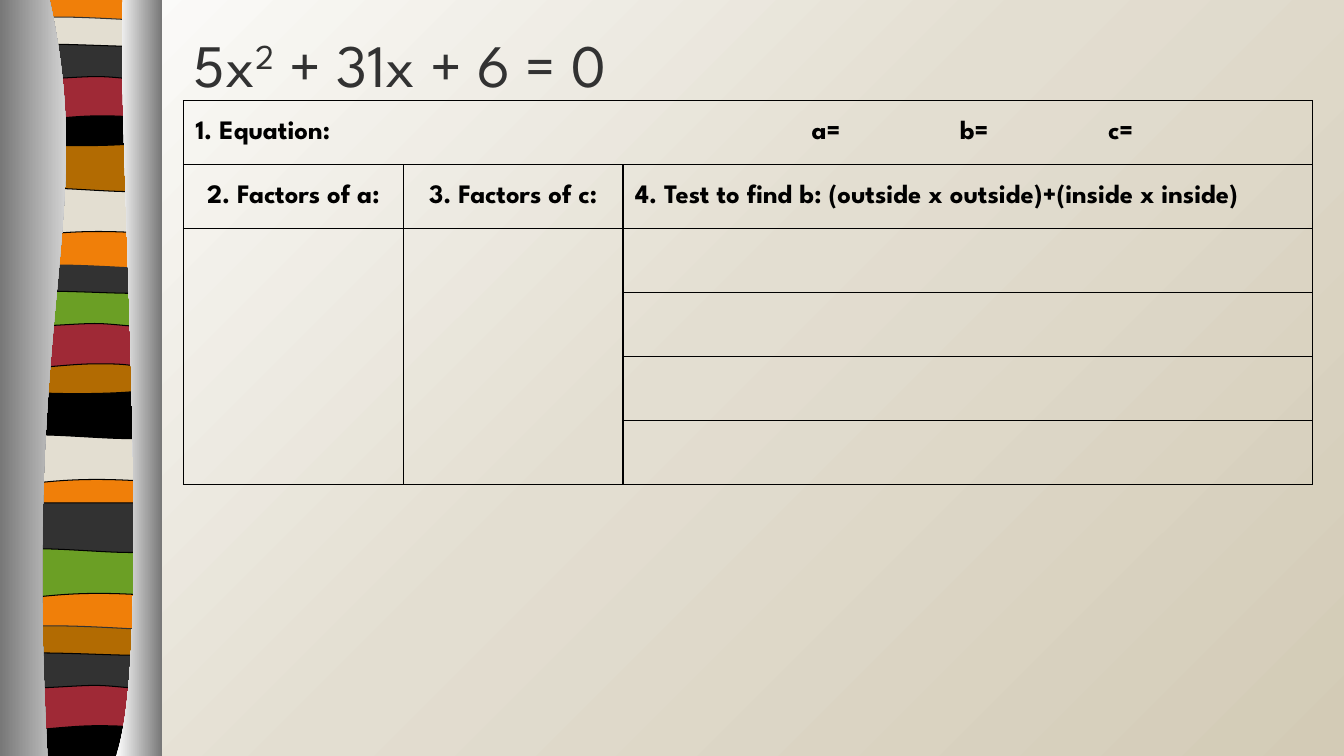
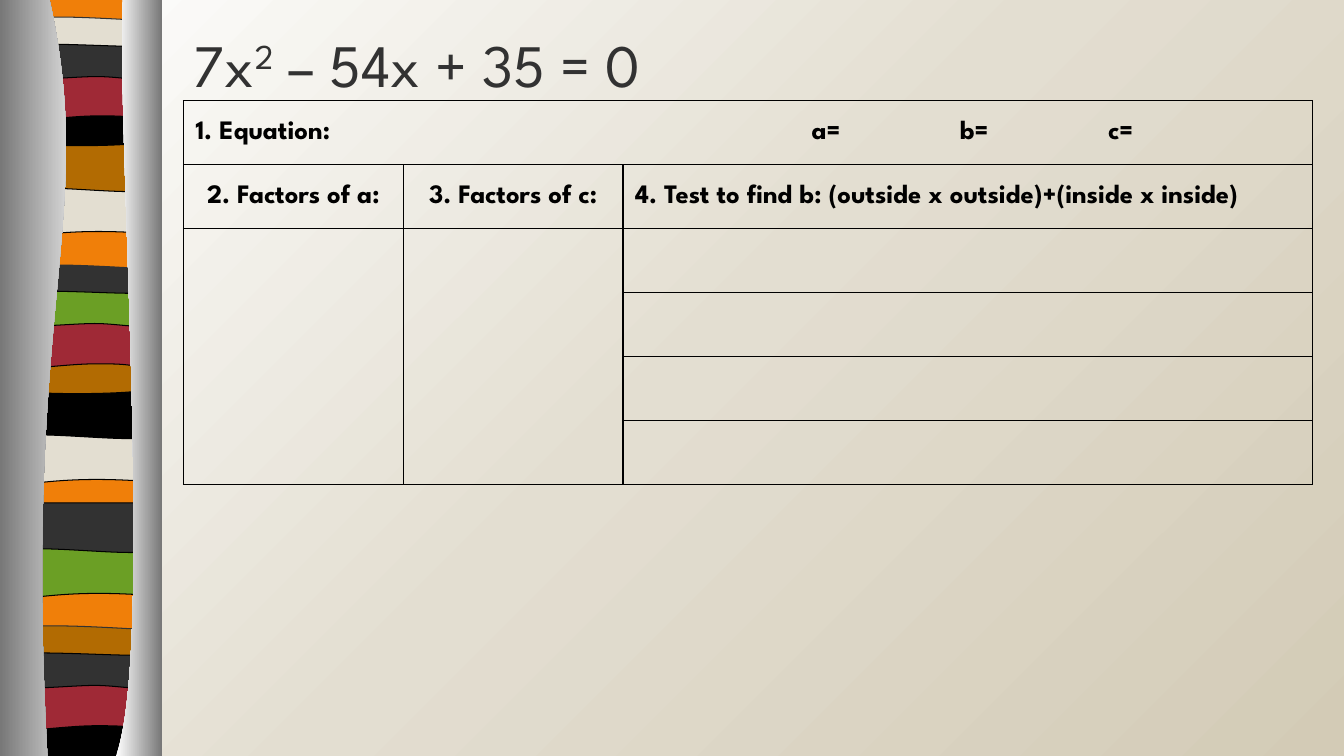
from copy import deepcopy

from lxml import etree
from pptx import Presentation
from pptx.dml.color import RGBColor
from pptx.enum.shapes import MSO_SHAPE
from pptx.enum.text import MSO_ANCHOR, PP_ALIGN
from pptx.oxml.ns import qn
from pptx.util import Inches, Pt

RECTANGLE = MSO_SHAPE.RECTANGLE
MIDDLE = MSO_ANCHOR.MIDDLE
LEFT, CENTER = PP_ALIGN.LEFT, PP_ALIGN.CENTER

BLACK = RGBColor(0x00, 0x00, 0x00)
WHITE = RGBColor(0xFF, 0xFF, 0xFF)
CHARCOAL = RGBColor(0x32, 0x32, 0x32)
ORANGE = RGBColor(0xF0, 0x7F, 0x09)
CREAM = RGBColor(0xE3, 0xDE, 0xD1)
SAND = RGBColor(0xD3, 0xCB, 0xB6)
BROWN = RGBColor(0xB2, 0x6B, 0x02)
RED = RGBColor(0x9F, 0x29, 0x36)
GREEN = RGBColor(0x6B, 0x9F, 0x25)
GRAY = RGBColor(0x76, 0x76, 0x76)

FONT = "League Spartan"
WIDTH, HEIGHT = 13.33, 7.5
LEFT_EDGE = 1.82

RIBBON = [(1.49, 0), (1.49, 7.48), (0, 7.48), (0, 0)]
WAVE = [(1.49, 0), (1.49, 0.47), (0.46, 0.39, 0.24, 0.55, 0, 0.47), (0, 0)]
SWELL = [(1.49, 0), (1.49, 0.47), (1.24, 0.54, 0.46, 0.41, 0, 0.47), (0, 0)]
LENS = [(1.49, 0.05), (1.49, 0.29), (1.24, 0.33, 0.24, 0.33, 0, 0.29), (0, 0.05),
        (0.1, 0, 0.33, 0.01, 0.57, 0.01), (0.82, 0.01, 1.3, 0.04, 1.49, 0.05)]
BOWL = [(1.49, 0), (1.49, 0.33), (1.24, 0.39, 0.25, 0.39, 0, 0.33), (0, 0),
        (0.92, 0.06, 1.18, 0, 1.49, 0)]
FOOT = [(1.49, 0), (1.49, 0.38), (0.01, 0.38), (0, 0), (0.92, 0.06, 1.18, 0, 1.49, 0)]
ARCH = [(1.49, 0), (1.49, 0.47), (1.26, 0.41, 1.17, 0.41, 0.92, 0.41),
        (0.67, 0.41, 0.23, 0.47, 0, 0.47), (0, 0)]
RIPPLE = [(1.49, 0.05), (1.49, 0.35), (1.39, 0.41, 1.16, 0.35, 0.92, 0.35),
          (0.67, 0.35, 0.15, 0.41, 0, 0.35), (0, 0.05),
          (0.21, 0, 1.01, 0.05, 1.26, 0.05), (1.51, 0.05, 1.44, 0.05, 1.49, 0.05)]
STRIPES = [
    (RIBBON, 0.04, -0.01, ORANGE),
    (WAVE, 0.04, 1.85, CREAM), (SWELL, 0.04, 1.41, BROWN), (LENS, 0.04, 0.16, CREAM),
    (BOWL, 0.04, 1.07, BLACK), (ARCH, 0.04, 0.74, RED), (RIPPLE, 0.04, 0.41, CHARCOAL),
    (WAVE, 0.02, 4.31, CREAM), (SWELL, 0.02, 3.86, BLACK), (LENS, 0.02, 2.62, CHARCOAL),
    (BOWL, 0.02, 3.53, BROWN), (ARCH, 0.02, 3.2, RED), (RIPPLE, 0.02, 2.86, GREEN),
    (WAVE, 0.04, 5.44, GREEN), (SWELL, 0.04, 4.99, CHARCOAL), (LENS, 0.02, 6.2, BROWN),
    (FOOT, 0.02, 7.12, BLACK), (ARCH, 0.02, 6.79, RED), (RIPPLE, 0.02, 6.45, CHARCOAL),
]
LEFT_SLEEVE = [(0.49, -0.01), (0.97, 2.17, 0.22, 2.96, 0.47, 7.5), (0, 7.5), (-0.01, -0.01)]
RIGHT_SLEEVE = [(1.22, -0.01), (1.15, 1.25, 1.54, 6.47, 1.15, 7.5), (1.61, 7.5), (1.61, 0)]

HEADINGS = [("2. Factors of a:", CENTER), ("3. Factors of c:", CENTER),
            ("4. Test to find b: (outside x outside)+(inside x inside)", LEFT)]
EQUATIONS = [("5x", " + 31x + 6 = 0"), ("7x", " – 54x + 35 = 0")]


class Deck:
    """Holds the shared style and the current slide."""

    def __init__(self):
        self.prs = Presentation()
        self.prs.slide_width, self.prs.slide_height = Inches(WIDTH), Inches(HEIGHT)
        self.layout = self.prs.slide_layouts[5]
        for ph in list(self.layout.placeholders)[1:]:
            self.layout.shapes.element.remove(ph.element)
        self.s = None

    def add_slide(self):
        first = self.s is None
        self.s = self.prs.slides.add_slide(self.layout)
        if first:
            self.decorate_layout()

    def decorate_layout(self):
        backdrop = self.s.shapes.add_shape(RECTANGLE, 0, 0, Inches(WIDTH), Inches(HEIGHT))
        backdrop.shadow.inherit = False
        backdrop.line.fill.background()
        self.gradient(backdrop, [SAND, CREAM, WHITE], radial=True)
        group = self.s.shapes.add_group_shape()
        for outline, left, top, color in STRIPES:
            sp = self.freeform(group.shapes, outline, left, top)
            sp.fill.solid()
            sp.fill.fore_color.rgb = color
            sp.line.color.rgb = CHARCOAL if outline is LENS else BLACK
            sp.line.width = Pt(0.75)
        self.gradient(self.freeform(group.shapes, LEFT_SLEEVE), [GRAY, WHITE])
        self.gradient(self.freeform(group.shapes, RIGHT_SLEEVE), [WHITE, GRAY])
        tree = self.layout.shapes.element
        tree.insert(2, backdrop.element)
        tree.insert(3, group.element)
        for number, props in enumerate(tree.iter(qn("p:cNvPr")), 1):
            props.set("id", str(number))

    def freeform(self, shapes, outline, left=0, top=0):
        points = [(Inches(left + x), Inches(top + y)) for step in outline
                  for x, y in zip(step[::2], step[1::2])]
        builder = shapes.build_freeform(*points[0])
        builder.add_line_segments(points[1:], close=True)
        sp = builder.convert_to_shape()
        sp.shadow.inherit = False
        sp.line.fill.background()
        lines = sp.element.iter(qn("a:lnTo"))
        self.bend(list(lines), outline[1:])
        return sp

    def bend(self, lines, steps):
        remaining = iter(lines)
        for step in steps:
            line = next(remaining)
            if len(step) == 6:
                curve = etree.Element(qn("a:cubicBezTo"))
                line.getparent().replace(line, curve)
                curve.append(line[0])
                for _ in range(2):
                    line = next(remaining)
                    curve.append(line[0])
                    line.getparent().remove(line)

    def gradient(self, sp, colors, radial=False):
        sp.fill.gradient()
        sp.fill.gradient_angle = 0
        grad = sp.element.spPr.find(qn("a:gradFill"))
        stops = grad.find(qn("a:gsLst"))
        while len(stops) < len(colors):
            stops.append(deepcopy(stops[0]))
        for i, (stop, color) in enumerate(zip(sp.fill.gradient_stops, colors)):
            stop.position = i / (len(colors) - 1)
            stop.color.rgb = color
        if radial:
            circle = etree.Element(qn("a:path"), path="circle")
            etree.SubElement(circle, qn("a:fillToRect"), l="100000", t="100000")
            grad.replace(grad.find(qn("a:lin")), circle)

    def style(self, p, size, color, bold=False, align=LEFT):
        p.alignment = align
        p.font.name, p.font.size, p.font.bold = FONT, Pt(size), bold
        p.font.color.rgb = color

    def title(self, start, end):
        sp = self.s.shapes.title
        sp.left, sp.top = Inches(LEFT_EDGE), Inches(0)
        sp.width, sp.height = Inches(10.93), Inches(1.25)
        tf = sp.text_frame
        tf.word_wrap, tf.vertical_anchor = True, MIDDLE
        p = tf.paragraphs[0]
        for text in (start, "2", end):
            r = p.add_run()
            r.text = text
        p.runs[1].font._element.set("baseline", "30000")
        self.style(p, 43, CHARCOAL)

    def cell_text(self, cell, text, align=LEFT, tabs=()):
        p = cell.text_frame.paragraphs[0]
        p.text = text
        self.style(p, 19, BLACK, True, align)
        if tabs:
            tab_list = etree.Element(qn("a:tabLst"))
            for tab in tabs:
                etree.SubElement(tab_list, qn("a:tab"), pos=str(Inches(tab)), algn="l")
            p._p.pPr.insert(0, tab_list)

    def cell_frame(self, cell):
        cell.fill.background()
        cell.vertical_anchor = MIDDLE
        cell.margin_left = cell.margin_right = Inches(0.12)
        cell.margin_top = cell.margin_bottom = 0
        for i, side in enumerate(("lnL", "lnR", "lnT", "lnB")):
            line = etree.Element(qn("a:" + side), w=str(Pt(1)))
            fill = etree.SubElement(line, qn("a:solidFill"))
            etree.SubElement(fill, qn("a:srgbClr"), val=str(BLACK))
            cell._tc.tcPr.insert(i, line)

    def worksheet(self):
        table = self.s.shapes.add_table(6, 3, Inches(LEFT_EDGE), Inches(1),
                                        Inches(11.2), Inches(3.81)).table
        table.first_row = table.horz_banding = False
        for column, width in zip(table.columns, (2.18, 2.18, 6.84)):
            column.width = Inches(width)
        for cell in table.iter_cells():
            self.cell_frame(cell)
        table.cell(0, 0).merge(table.cell(0, 2))
        for col in (0, 1):
            table.cell(2, col).merge(table.cell(5, col))
        self.cell_text(table.cell(0, 0), "1. Equation:\ta=\tb=\tc=",
                       tabs=(6.11, 7.58, 9.05))
        for col, (text, align) in enumerate(HEADINGS):
            self.cell_text(table.cell(1, col), text, align)


def main():
    deck = Deck()
    for start, end in EQUATIONS:
        deck.add_slide()
        deck.title(start, end)
        deck.worksheet()
    deck.prs.save("out.pptx")


if __name__ == "__main__":
    main()
